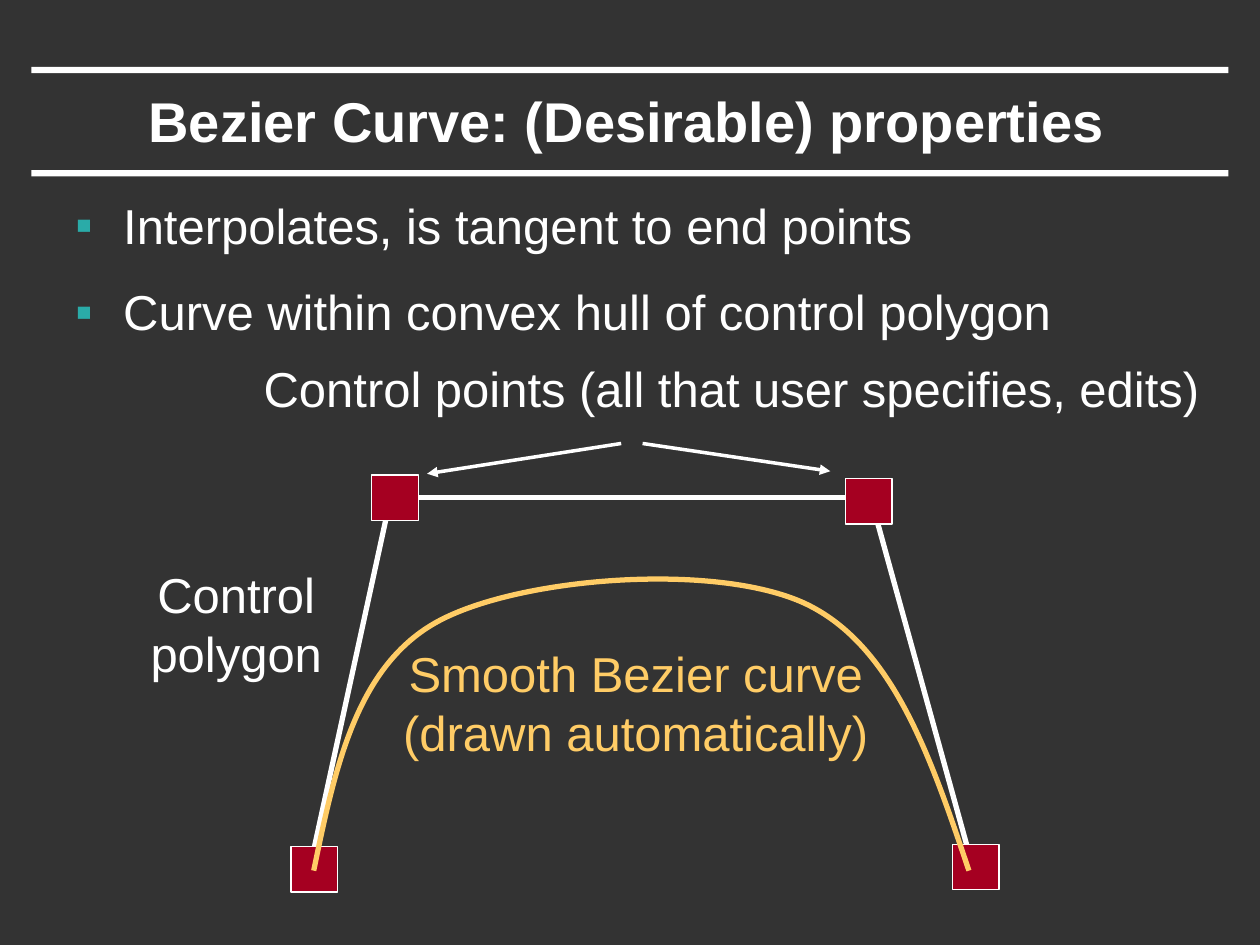
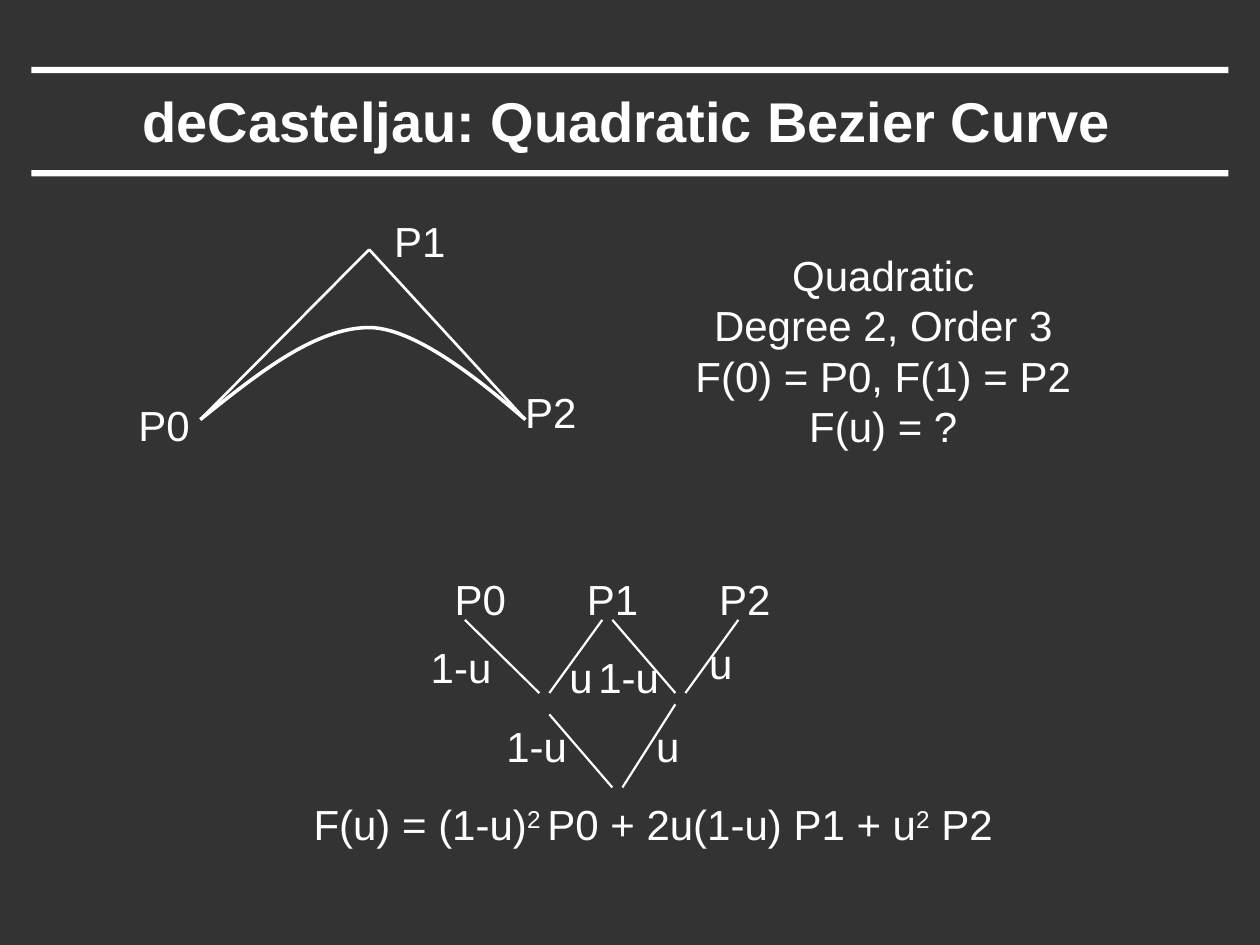
from lxml import etree
from pptx import Presentation
from pptx.dml.color import RGBColor
from pptx.enum.shapes import MSO_CONNECTOR, MSO_SHAPE
from pptx.enum.text import MSO_ANCHOR, MSO_AUTO_SIZE, PP_ALIGN
from pptx.oxml.ns import qn
from pptx.util import Inches, Pt

STRAIGHT = MSO_CONNECTOR.STRAIGHT
RECTANGLE = MSO_SHAPE.RECTANGLE
LEFT, CENTER = PP_ALIGN.LEFT, PP_ALIGN.CENTER
TOP, MIDDLE = MSO_ANCHOR.TOP, MSO_ANCHOR.MIDDLE
GROW, FIXED = MSO_AUTO_SIZE.SHAPE_TO_FIT_TEXT, MSO_AUTO_SIZE.NONE

WIDTH, HEIGHT = Inches(10), Inches(7.5)
COLUMN, ROW = WIDTH / 10, HEIGHT / 7.5
FONT = "Arial"
BACKGROUND, WHITE, TEAL = "333333", "FFFFFF", "2AABA8"
RED, YELLOW = "A50021", "FFCC66"
TITLE_SIZE, BODY_SIZE, LABEL_SIZE = 32, 28, 24
HANDLE_WIDTH, HANDLE_HEIGHT = 0.37, 0.36
LABEL_HEIGHT = 0.5
LABEL_WIDTHS = {"P0": 0.61, "P1": 0.61, "P2": 0.61, "1-u": 0.68, "u": 0.39}


def color(hex_string):
    return RGBColor.from_string(hex_string)


def place(column, row):
    """Turn a grid position or size into slide lengths."""
    return round(column * COLUMN), round(row * ROW)


def style_run(run, size, hex_string, bold=False):
    run.font.name = FONT
    run.font.size = Pt(size)
    run.font.bold = bold
    run.font.color.rgb = color(hex_string)


def add_text(shapes, box, lines, size, hex_string=WHITE, align=CENTER,
             bold=False, anchor=TOP, wrap=False, auto_size=GROW):
    shape = shapes.add_textbox(*place(*box[:2]), *place(*box[2:]))
    frame = shape.text_frame
    frame.text = "\n".join(lines)
    frame.word_wrap = wrap
    frame.auto_size = auto_size
    frame.vertical_anchor = anchor
    for paragraph in frame.paragraphs:
        paragraph.alignment = align
        for run in paragraph.runs:
            style_run(run, size, hex_string, bold)
    return shape


def add_label(shapes, column, row, text):
    box = (column, row, LABEL_WIDTHS[text], LABEL_HEIGHT)
    add_text(shapes, box, [text], LABEL_SIZE, align=LEFT)


def add_bullets(shapes, box, lines):
    shape = add_text(shapes, box, lines, BODY_SIZE, align=LEFT,
                     wrap=True, auto_size=FIXED)
    indent = Inches(0.38)
    for paragraph in shape.text_frame.paragraphs:
        paragraph.space_after = Pt(16)
        properties = paragraph._p.get_or_add_pPr()
        properties.set("marL", str(indent))
        properties.set("indent", str(-indent))
        bullet_color = etree.SubElement(properties, qn("a:buClr"))
        etree.SubElement(bullet_color, qn("a:srgbClr"), val=TEAL)
        etree.SubElement(properties, qn("a:buFont"), typeface=FONT)
        etree.SubElement(properties, qn("a:buChar"), char="▪")


def add_formula(shapes, box, parts):
    """Write one line from (text, is superscript) parts."""
    shape = add_text(shapes, box, [], LABEL_SIZE)
    paragraph = shape.text_frame.paragraphs[0]
    paragraph.alignment = LEFT
    for text, superscript in parts:
        run = paragraph.add_run()
        run.text = text
        style_run(run, LABEL_SIZE, WHITE)
        if superscript:
            run._r.get_or_add_rPr().set("baseline", "30000")


def add_rectangle(shapes, box, fill, outline=None):
    shape = shapes.add_shape(RECTANGLE, *place(*box[:2]), *place(*box[2:]))
    shape.shadow.inherit = False
    shape.fill.solid()
    shape.fill.fore_color.rgb = color(fill)
    if outline:
        shape.line.color.rgb = color(outline)
        shape.line.width = Pt(0.75)
    else:
        shape.line.fill.background()


def add_line(shapes, start, end, width, arrow=False):
    connector = shapes.add_connector(STRAIGHT, *place(*start), *place(*end))
    connector.line.color.rgb = color(WHITE)
    connector.line.width = Pt(width)
    if arrow:
        line = connector.line._get_or_add_ln()
        etree.SubElement(line, qn("a:tailEnd"), type="triangle")
    etree.SubElement(connector._element.spPr, qn("a:effectLst"))


def add_curve(shapes, points, hex_string, width):
    """Draw cubic segments: a start, then two controls and an end for each."""
    start, *rest = [place(*point) for point in points]
    builder = shapes.build_freeform(*start)
    builder.add_line_segments(rest, close=False)
    shape = builder.convert_to_shape()
    shape.shadow.inherit = False
    shape.fill.background()
    shape.line.color.rgb = color(hex_string)
    shape.line.width = Pt(width)
    steps = shape._element.findall(".//" + qn("a:lnTo"))
    for first in range(0, len(steps), 3):
        segment = etree.SubElement(steps[first].getparent(), qn("a:cubicBezTo"))
        for step in steps[first:first + 3]:
            segment.append(step[0])
            step.getparent().remove(step)


def add_titled_slide(presentation, title):
    slide = presentation.slides.add_slide(presentation.slide_layouts[6])
    for row in (1.35, 0.53):
        add_rectangle(slide.shapes, (0.25, row, 9.5, 0.05), WHITE)
    add_text(slide.shapes, (0.74, 0.58, 8.47, 0.75), [title], TITLE_SIZE,
             bold=True, anchor=MIDDLE, wrap=True, auto_size=FIXED)
    return slide


def build_properties_slide(presentation):
    slide = add_titled_slide(presentation, "Bezier Curve: (Desirable) properties")
    shapes = slide.shapes
    add_bullets(shapes, (0.5, 1.5, 9, 5.5), [
        "Interpolates, is tangent to end points",
        "Curve within convex hull of control polygon",
    ])
    polygon_sides = [
        ((2.45, 6.93), (3.1, 3.95)),
        ((3.1, 3.95), (6.89, 3.95)),
        ((6.91, 3.95), (7.74, 6.95)),
    ]
    for start, end in polygon_sides:
        add_line(shapes, start, end, 3)
    for column, row in [(2.95, 3.77), (2.31, 6.72), (6.71, 3.8), (7.56, 6.7)]:
        box = (column, row, HANDLE_WIDTH, HANDLE_HEIGHT)
        add_rectangle(shapes, box, RED, WHITE)
    add_text(shapes, (1.98, 2.8, 7.65, 0.57),
             ["Control points (all that user specifies, edits)"], BODY_SIZE)
    add_curve(shapes, [
        (2.49, 6.91),
        (2.66, 6.09), (2.83, 5.28), (3.48, 4.93),
        (4.13, 4.58), (5.68, 4.46), (6.39, 4.79),
        (7.09, 5.12), (7.39, 6.02), (7.69, 6.91),
    ], YELLOW, 3)
    add_line(shapes, (4.93, 3.52), (3.39, 3.76), 2, arrow=True)
    add_line(shapes, (5.1, 3.52), (6.59, 3.74), 2, arrow=True)
    add_text(shapes, (3.09, 5.06, 3.91, 1.03),
             ["Smooth Bezier curve", "(drawn automatically)"], BODY_SIZE, YELLOW)
    add_text(shapes, (1.01, 4.43, 1.73, 1.03), ["Control", "polygon"], BODY_SIZE)


def add_quadratic_curve(shapes):
    start, peak, end = (1.59, 3.33), (2.93, 1.98), (4.17, 3.33)
    add_line(shapes, start, peak, 1.5)
    add_line(shapes, peak, end, 1.5)
    add_curve(shapes, [
        start,
        (2.04, 2.97), (2.5, 2.6), (2.93, 2.6),
        (3.36, 2.6), (4.02, 3.21), end,
    ], WHITE, 2)
    add_label(shapes, 1, 3.12, "P0")
    add_label(shapes, 3.03, 1.66, "P1")
    add_label(shapes, 4.07, 3.02, "P2")


def add_tree_level(shapes, branches, weights):
    for start, end in branches:
        add_line(shapes, start, end, 1.25)
    for column, row, text in weights:
        add_label(shapes, column, row, text)


def build_casteljau_slide(presentation):
    slide = add_titled_slide(presentation, "deCasteljau: Quadratic Bezier Curve")
    shapes = slide.shapes
    add_quadratic_curve(shapes.add_group_shape().shapes)
    add_text(shapes, (5.42, 1.93, 3.18, 1.7), [
        "Quadratic", "Degree 2, Order 3", "F(0) = P0, F(1) = P2", "F(u) = ?",
    ], LABEL_SIZE)
    add_formula(shapes, (2.39, 6.29, 5.63, LABEL_HEIGHT), [
        ("F(u) = (1-u)", False), ("2 ", True),
        ("P0 + 2u(1-u) P1 + u", False), ("2", True), (" P2", False),
    ])
    for index in range(3):
        add_label(shapes, 3.51 + 1.05 * index, 4.5, f"P{index}")
    add_tree_level(shapes, [
        ((3.69, 4.92), (4.28, 5.5)),
        ((4.78, 4.92), (4.36, 5.5)),
        ((4.86, 4.92), (5.36, 5.5)),
        ((5.86, 4.92), (5.44, 5.5)),
    ], [
        (3.32, 5.04, "1-u"), (4.65, 5.12, "1-u"),
        (4.42, 5.12, "u"), (5.53, 5.01, "u"),
    ])
    add_tree_level(shapes.add_group_shape().shapes, [
        ((4.36, 5.67), (4.86, 6.25)),
        ((5.36, 5.59), (4.94, 6.25)),
    ], [(3.92, 5.67, "1-u"), (5.11, 5.67, "u")])


def main():
    presentation = Presentation()
    presentation.slide_width, presentation.slide_height = WIDTH, HEIGHT
    background = presentation.slide_master.background.fill
    background.solid()
    background.fore_color.rgb = color(BACKGROUND)
    build_properties_slide(presentation)
    build_casteljau_slide(presentation)
    presentation.save("out.pptx")


if __name__ == "__main__":
    main()
